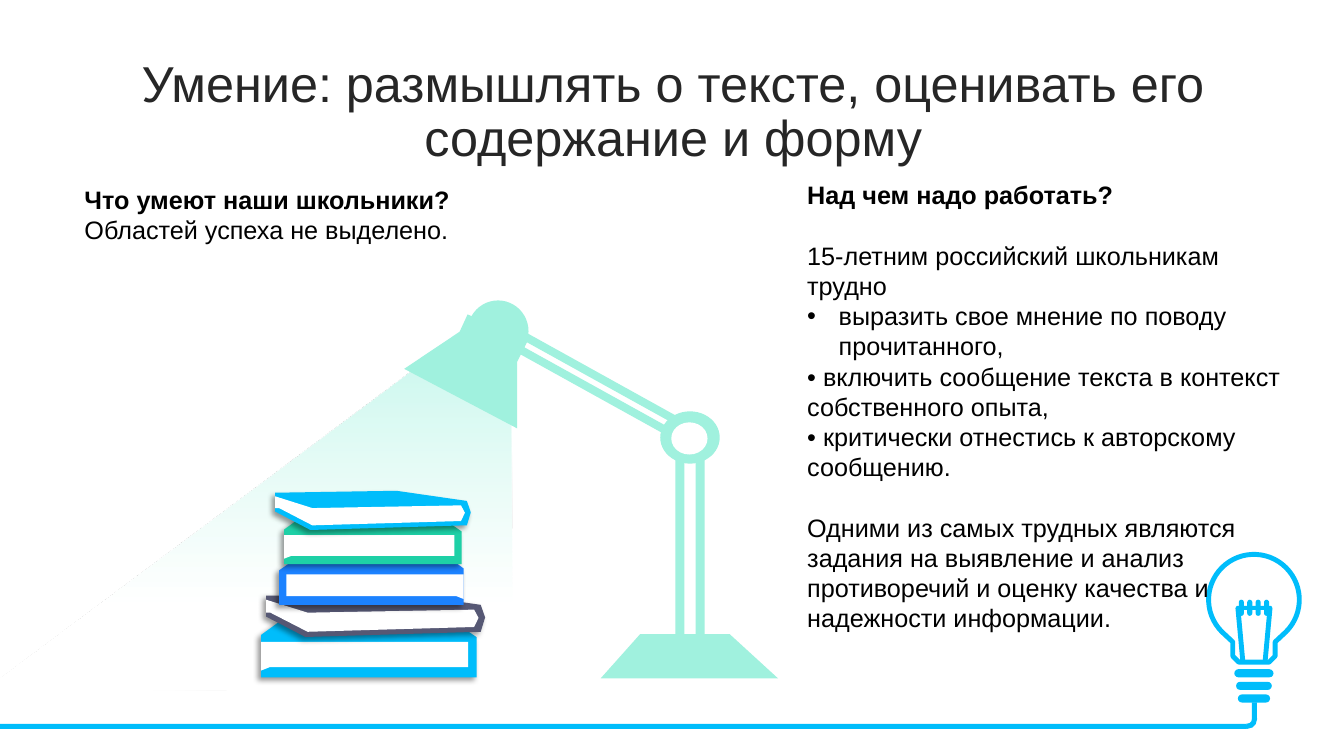
from math import cos, radians, sin

from lxml.etree import SubElement
from pptx import Presentation
from pptx.dml.color import RGBColor
from pptx.enum.shapes import MSO_CONNECTOR, MSO_SHAPE
from pptx.enum.text import MSO_ANCHOR, PP_ALIGN
from pptx.oxml.ns import qn
from pptx.util import Pt

SKY = RGBColor(0x00, 0xBD, 0xFB)
BLUE = RGBColor(0x1C, 0x82, 0xFF)
GREEN = RGBColor(0x1E, 0xD0, 0xA6)
SLATE = RGBColor(0x56, 0x58, 0x74)
MINT = RGBColor(0xA0, 0xF1, 0xDE)
GLOW = RGBColor(0xCF, 0xF8, 0xEF)
WHITE = RGBColor(0xFF, 0xFF, 0xFF)
BLACK = RGBColor(0x00, 0x00, 0x00)
INK = RGBColor(0x26, 0x26, 0x26)

BODY = {"size": Pt(18), "name": "Arial", "bold": False}
HEAD = BODY | {"bold": True}
TITLE = BODY | {"size": Pt(36)}
GAP = {"space_before": Pt(21.6)}
CENTRED = {"alignment": PP_ALIGN.CENTER, "line_spacing": 0.9}

TEXTS = [
    ((25, 40, 912, 82), MSO_ANCHOR.MIDDLE, INK, [
        ("Умение: размышлять о тексте, оценивать его содержание и форму", TITLE, CENTRED, False)]),
    ((53.3, 128.2, 355, 51), MSO_ANCHOR.TOP, BLACK, [
        ("Что умеют наши школьники?", HEAD, {}, False),
        ("Областей успеха не выделено.", BODY, {}, False)]),
    ((569.5, 124.6, 358.6, 334), MSO_ANCHOR.TOP, BLACK, [
        ("Над чем надо работать?", HEAD, {}, False),
        ("15-летним российский школьникам трудно", BODY, GAP, False),
        ("выразить свое мнение по поводу прочитанного,", BODY, {}, True),
        ("• включить сообщение текста в контекст собственного опыта,", BODY, {}, False),
        ("• критически отнестись к авторскому сообщению.", BODY, {}, False),
        ("Одними из самых трудных являются задания на выявление и анализ противоречий "
         "и оценку качества и надежности информации.", BODY, GAP, False)]),
]

UPRIGHT = ([(0.09, 0), (0, 0.25), (0, 1), (1, 1), (1, 0.29), (0.89, 0)],
           [(0, 0.37), (0.96, 0.37), (0.96, 0.82), (0.04, 0.82), (0, 0.88)])
TILTED = ([(0, 0.05), (0.62, 0), (0.98, 0.26), (1, 0.55), (0.98, 0.88), (0.18, 1), (0, 0.53)],
          [(0, 0.14), (0.19, 0.44), (0.95, 0.37), (0.97, 0.56), (0.95, 0.77), (0.19, 0.88),
           (0.02, 0.44), (0, 0.44)])
BOOKS = [
    (UPRIGHT, (186.5, 443.5, 154, 40.3), SKY, False),
    (TILTED, (190, 424, 156.5, 31), SLATE, False),
    (UPRIGHT, (199.4, 397.4, 131.8, 34.6), BLUE, True),
    (UPRIGHT, (203, 370, 126.7, 33), GREEN, False),
    (TILTED, (196.6, 350.6, 139.7, 28), SKY, False),
]

BEAM = [(364.3, 298.8), (365.8, 493.2), (-10, 491.8), (298.8, 261.4)]
SHADE = [(334, 224.6), (328.3, 237), (288.7, 263.5), (369.4, 306), (369.4, 258.5), (376.6, 244)]
FOOT = [(457.2, 453), (521.3, 453), (555.8, 484.6), (429, 484.6)]
BULB_X, BULB_Y, BULB_RADIUS = 895.7, 428.4, 32.4
NECK = [(15.1, 30.2), (15.1, 40.3), (10.8, 44.6)]
RECT, OVAL, PILL = MSO_SHAPE.RECTANGLE, MSO_SHAPE.OVAL, MSO_SHAPE.ROUNDED_RECTANGLE
CABLE = [
    (RECT, (0, 517, 890.6, 3.6), SKY),
    (RECT, (894.2, 501.8, 3.6, 12.2), SKY),
    (MSO_SHAPE.BLOCK_ARC, (884.2, 506.9, 13.7, 13.7), SKY, 0, (213.394, 60.915, 0.271)),
]
LAMP = [
    (RECT, (424.8, 188.6, 5.8, 162), MINT, 299),
    (RECT, (419, 196.6, 5.8, 162), MINT, 299),
    (RECT, (496.8, 313, 6.5, 143.3), MINT),
    (RECT, (482.4, 313, 6.5, 143.3), MINT),
    (OVAL, (471.6, 293.8, 42.5, 37.4), MINT),
    (OVAL, (479.5, 301.7, 25.9, 23), WHITE),
    (OVAL, (334, 214.6, 43.5, 44), MINT),
]


def assign(target, values):
    for name, value in values.items():
        setattr(target, name, value)


def paint(shape, colour):
    shape.shadow.inherit = False
    shape.fill.solid()
    shape.fill.fore_color.rgb = colour
    shape.line.fill.background()
    return shape


def add_preset(kind, place, colour, turn=0, adjustments=()):
    shape = paint(page.shapes.add_shape(kind, *map(Pt, place)), colour)
    shape.rotation = turn
    for index, value in enumerate(adjustments):
        shape.adjustments[index] = value


def add_outline(points, colour):
    local = [(x * 100, y * 100) for x, y in points]
    builder = page.shapes.build_freeform(*local[0], scale=Pt(0.01))
    builder.add_line_segments(local[1:], close=True)
    return paint(builder.convert_to_shape(), colour)


def add_colour(parent, colour, alpha):
    node = SubElement(parent, qn("a:srgbClr"), val=str(colour))
    SubElement(node, qn("a:alpha"), val=str(alpha * 1000))


def add_book(outlines, place, colour, mirrored):
    left, top, width, height = place
    for outline, paper in zip(outlines, (colour, WHITE)):
        points = [(left + width * (1 - x if mirrored else x), top + height * y) for x, y in outline]
        shape = add_outline(points, paper)
        if paper == colour:
            effects = shape._element.spPr.find(qn("a:effectLst"))
            cast = SubElement(effects, qn("a:outerShdw"), blurRad=str(Pt(4)), dist=str(Pt(3)),
                              dir=str(135 * 60000), algn="tr", rotWithShape="0")
            add_colour(cast, BLACK, 40)


def add_beam():
    beam = add_outline(BEAM, WHITE)
    beam.fill.gradient()
    beam.fill.gradient_angle = 90
    stops = beam._element.spPr.find(qn("a:gradFill")).find(qn("a:gsLst"))
    for stop in list(stops):
        stops.remove(stop)
    for place, colour, alpha in ((0, WHITE, 20), (27, WHITE, 80), (100, GLOW, 100)):
        add_colour(SubElement(stops, qn("a:gs"), pos=str(place * 1000)), colour, alpha)


def add_bulb():
    dome = [(BULB_RADIUS * cos(radians(a)), BULB_RADIUS * sin(radians(a))) for a in range(135, 406, 6)]
    rim = dome + NECK + [(-x, y) for x, y in reversed(NECK)]
    glass = add_outline([(BULB_X + x, BULB_Y + y) for x, y in rim], WHITE)
    glass.line.color.rgb = SKY
    glass.line.width = Pt(3.5)
    for row in range(3):
        width = 28 - 2.5 * row
        add_preset(PILL, (BULB_X - width / 2, 478 + 9 * row, width, 5.8), SKY, 0, [0.5])
    add_preset(PILL, (BULB_X - 13, 432.7, 26, 3), SKY, 0, [0.5])
    for tooth in range(4):
        add_preset(PILL, (BULB_X - 10.8 + 6 * tooth, 428.4, 3.6, 11.5), SKY, 0, [0.5])
    for side in (-1, 1):
        ends = (BULB_X + 11.5 * side, 434, BULB_X + 8 * side, 472)
        leg = page.shapes.add_connector(MSO_CONNECTOR.STRAIGHT, *map(Pt, ends))
        leg.line.color.rgb = SKY
        leg.line.width = Pt(3.5)
        SubElement(leg._element.spPr, qn("a:effectLst"))


def add_text(place, anchor, colour, lines):
    frame = page.shapes.add_textbox(*map(Pt, place)).text_frame
    assign(frame, {"word_wrap": True, "vertical_anchor": anchor})
    for index, (words, font, layout, bullet) in enumerate(lines):
        para = frame.add_paragraph() if index else frame.paragraphs[0]
        assign(para, layout)
        span = para.add_run()
        span.text = words
        assign(span.font, font)
        span.font.color.rgb = colour
        if bullet:
            props = para._p.get_or_add_pPr()
            props.set("marL", str(Pt(22.5)))
            props.set("indent", str(-Pt(22.5)))
            SubElement(props, qn("a:buFont"), typeface="Arial")
            SubElement(props, qn("a:buChar"), char="•")


deck = Presentation()
assign(deck, {"slide_width": Pt(960), "slide_height": Pt(540)})
page = deck.slides.add_slide(deck.slide_layouts[6])

add_bulb()
for preset in CABLE:
    add_preset(*preset)
add_beam()
for preset in LAMP:
    add_preset(*preset)
for outline in (SHADE, FOOT):
    add_outline(outline, MINT)
for book in BOOKS:
    add_book(*book)
for text in TEXTS:
    add_text(*text)
deck.save("out.pptx")
